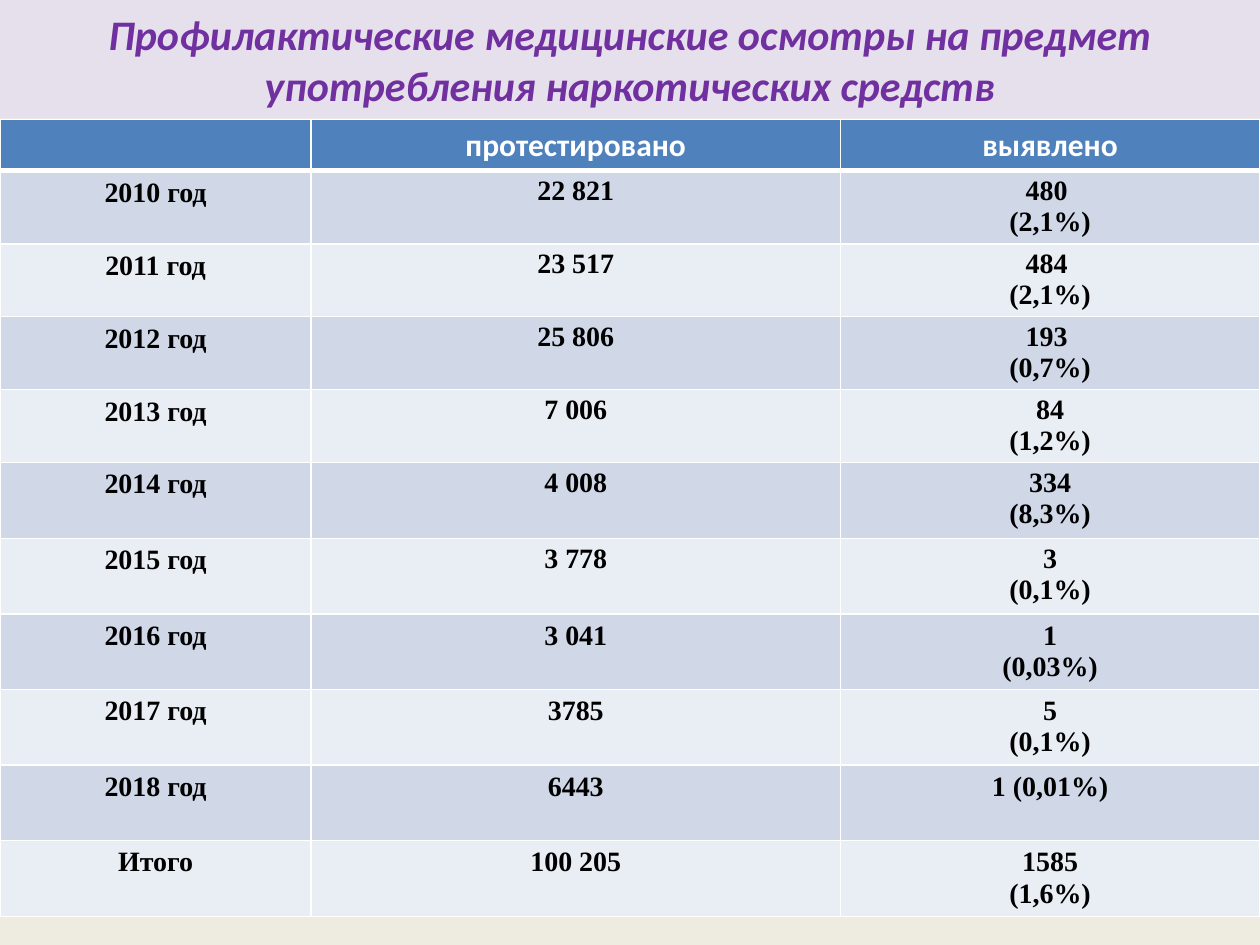
from lxml.etree import SubElement
from pptx import Presentation
from pptx.dml.color import RGBColor
from pptx.enum.shapes import MSO_SHAPE
from pptx.enum.text import MSO_ANCHOR, PP_ALIGN
from pptx.oxml.ns import qn
from pptx.util import Pt

COLORS = {
    "background": "EEECE1",
    "title_fill": "E6E0EC",
    "title_text": "7030A0",
    "header": "4F81BD",
    "odd_row": "D0D8E8",
    "even_row": "E9EDF4",
    "white": "FFFFFF",
    "black": "000000",
}
HEADERS = ["", "протестировано", "выявлено"]
RESULTS = [
    ("2010 год", "22 821", "480 \n(2,1%)"),
    ("2011 год", "23 517", "484 \n(2,1%)"),
    ("2012 год", "25 806", "193 \n(0,7%)"),
    ("2013 год", "7 006", "84\n(1,2%)"),
    ("2014 год", "4 008", "334\n(8,3%)"),
    ("2015 год", "3 778", "3\n(0,1%)"),
    ("2016 год", "3 041", "1\n(0,03%)"),
    ("2017 год", "3785", "5\n(0,1%)"),
    ("2018 год", "6443", "1 (0,01%)"),
    ("Итого", "100 205", "1585\n(1,6%)"),
]
COL_WIDTHS = [177.84, 302.4, 239.76]
ROW_HEIGHTS = [27.4] + [41.7] * 4 + [43.2] * 6


def write_text(tf, text, size=16, font="Times New Roman", color="black", italic=False):
    """Fill a text frame with centred bold text, one paragraph per line."""
    for i, line in enumerate(text.split("\n")):
        p = tf.paragraphs[0] if i == 0 else tf.add_paragraph()
        p.alignment = PP_ALIGN.CENTER
        if not line:
            continue
        r = p.add_run()
        r.text = line
        r.font.size = Pt(size)
        r.font.name = font
        r.font.bold = True
        r.font.italic = italic
        r.font.color.rgb = RGBColor.from_string(COLORS[color])


def set_borders(cell, top=1, bottom=1):
    """Draw white borders; top and bottom are widths in points."""
    tc_pr = cell._tc.get_or_add_tcPr()
    for side, width in (("L", 1), ("R", 1), ("T", top), ("B", bottom)):
        ln = SubElement(tc_pr, qn(f"a:ln{side}"), w=str(int(Pt(width))))
        fill = SubElement(ln, qn("a:solidFill"))
        SubElement(fill, qn("a:srgbClr"), val=COLORS["white"])


prs = Presentation()
prs.slide_width, prs.slide_height = Pt(720), Pt(540)
s = prs.slides.add_slide(prs.slide_layouts[6])
s.background.fill.solid()
s.background.fill.fore_color.rgb = RGBColor.from_string(COLORS["background"])

# Results table
frame = s.shapes.add_table(len(ROW_HEIGHTS), len(COL_WIDTHS), 0, Pt(68.4),
                           Pt(720), Pt(sum(ROW_HEIGHTS)))
table = frame.table
for column, width in zip(table.columns, COL_WIDTHS):
    column.width = Pt(width)
for row, height in zip(table.rows, ROW_HEIGHTS):
    row.height = Pt(height)

for i, values in enumerate([HEADERS, *RESULTS]):
    for j, text in enumerate(values):
        cell = table.cell(i, j)
        if i == 0:
            fill_color = "header"
            set_borders(cell, bottom=3)
            write_text(cell.text_frame, text, size=18, font="Calibri", color="white")
        else:
            fill_color = "odd_row" if i % 2 else "even_row"
            set_borders(cell, top=3 if i == 1 else 1)
            write_text(cell.text_frame, text)
        cell.fill.solid()
        cell.fill.fore_color.rgb = RGBColor.from_string(COLORS[fill_color])
        if 1 <= i <= 6 and j > 0:
            cell.margin_left = cell.margin_right = Pt(2.88)
            cell.margin_top = cell.margin_bottom = Pt(2.88)

# Title band
title = s.shapes.add_shape(MSO_SHAPE.RECTANGLE, 0, 0, Pt(720), Pt(67.7))
title.shadow.inherit = False
title.fill.solid()
title.fill.fore_color.rgb = RGBColor.from_string(COLORS["title_fill"])
title.line.fill.background()
tf = title.text_frame
tf.word_wrap = True
tf.vertical_anchor = MSO_ANCHOR.MIDDLE
write_text(tf, "Профилактические медицинские осмотры на предмет употребления наркотических средств",
           size=24, font="Calibri", color="title_text", italic=True)

prs.save("out.pptx")
